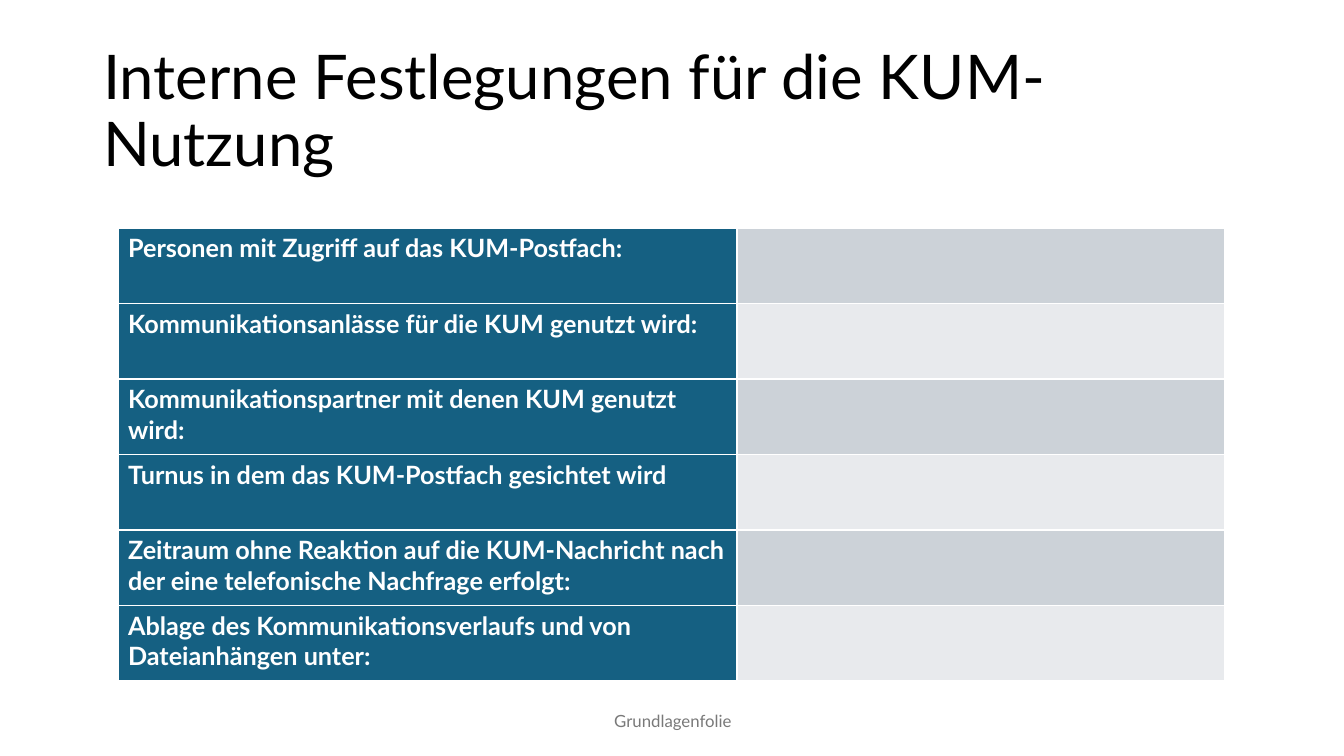
import pptx
import pptx.util
import pptx.dml.color
import pptx.enum.text
import pptx.oxml
import pptx.oxml.ns

SCALE = 914400 / 100.8
FONT = "Lato"
BLACK = pptx.dml.color.RGBColor(0x00, 0x00, 0x00)
WHITE = pptx.dml.color.RGBColor(0xFF, 0xFF, 0xFF)
GREY = pptx.dml.color.RGBColor(0x79, 0x79, 0x79)
TEAL = pptx.dml.color.RGBColor(0x15, 0x60, 0x82)
BAND_DARK = pptx.dml.color.RGBColor(0xCC, 0xD2, 0xD8)
BAND_LIGHT = pptx.dml.color.RGBColor(0xE8, 0xEA, 0xED)
LABELS = [
    "Personen mit Zugriff auf das KUM-Postfach:",
    "Kommunikationsanlässe für die KUM genutzt wird:",
    "Kommunikationspartner mit denen KUM genutzt wird:",
    "Turnus in dem das KUM-Postfach gesichtet wird",
    "Zeitraum ohne Reaktion auf die KUM-Nachricht nach der eine telefonische Nachfrage erfolgt:",
    "Ablage des Kommunikationsverlaufs und von Dateianhängen unter:",
]


def px(length):
    return pptx.util.Emu(round(length * SCALE))


def write(text_frame, text, size, color, alignment, bold=False):
    text_frame.text = text
    text_frame.word_wrap = True
    paragraph = text_frame.paragraphs[0]
    paragraph.alignment = alignment
    font = paragraph.runs[0].font
    font.name = FONT
    font.size = pptx.util.Pt(size)
    font.bold = bold
    font.color.rgb = color


LEFT = pptx.enum.text.PP_ALIGN.LEFT
CENTER = pptx.enum.text.PP_ALIGN.CENTER
MIDDLE = pptx.enum.text.MSO_ANCHOR.MIDDLE

presentation = pptx.Presentation()
presentation.slide_width = px(1344)
presentation.slide_height = px(756)
slide = presentation.slides.add_slide(presentation.slide_layouts[5])

title = slide.shapes.title
title.left, title.top, title.width, title.height = px(93), px(40), px(1159), px(146)
write(title.text_frame, "Interne Festlegungen für die KUM-Nutzung", 44, BLACK, LEFT)
title.text_frame.auto_size = pptx.enum.text.MSO_AUTO_SIZE.NONE
title.text_frame.vertical_anchor = MIDDLE
title.text_frame.paragraphs[0].line_spacing = 0.9

footer = slide.shapes.add_textbox(px(446), px(701), px(454), px(40))
write(footer.text_frame, "Grundlagenfolie", 12, GREY, CENTER)
footer.text_frame.vertical_anchor = MIDDLE

table = slide.shapes.add_table(len(LABELS), 2, px(118), px(228), px(1107), px(453)).table
table.columns[0].width = px(619)
table.columns[1].width = px(488)

for row, label in enumerate(LABELS):
    label_cell, answer_cell = table.cell(row, 0), table.cell(row, 1)
    write(label_cell.text_frame, label, 18, WHITE, LEFT, bold=True)
    fills = [TEAL, BAND_LIGHT if row % 2 else BAND_DARK]
    for cell, color in zip([label_cell, answer_cell], fills):
        properties = cell._tc.get_or_add_tcPr()
        for side in ("lnL", "lnR", "lnT", "lnB"):
            properties.append(pptx.oxml.parse_xml(
                f'<a:{side} {pptx.oxml.ns.nsdecls("a")} w="12700"><a:solidFill>'
                f'<a:srgbClr val="{WHITE}"/></a:solidFill></a:{side}>'))
        cell.fill.solid()
        cell.fill.fore_color.rgb = color

presentation.save("out.pptx")
